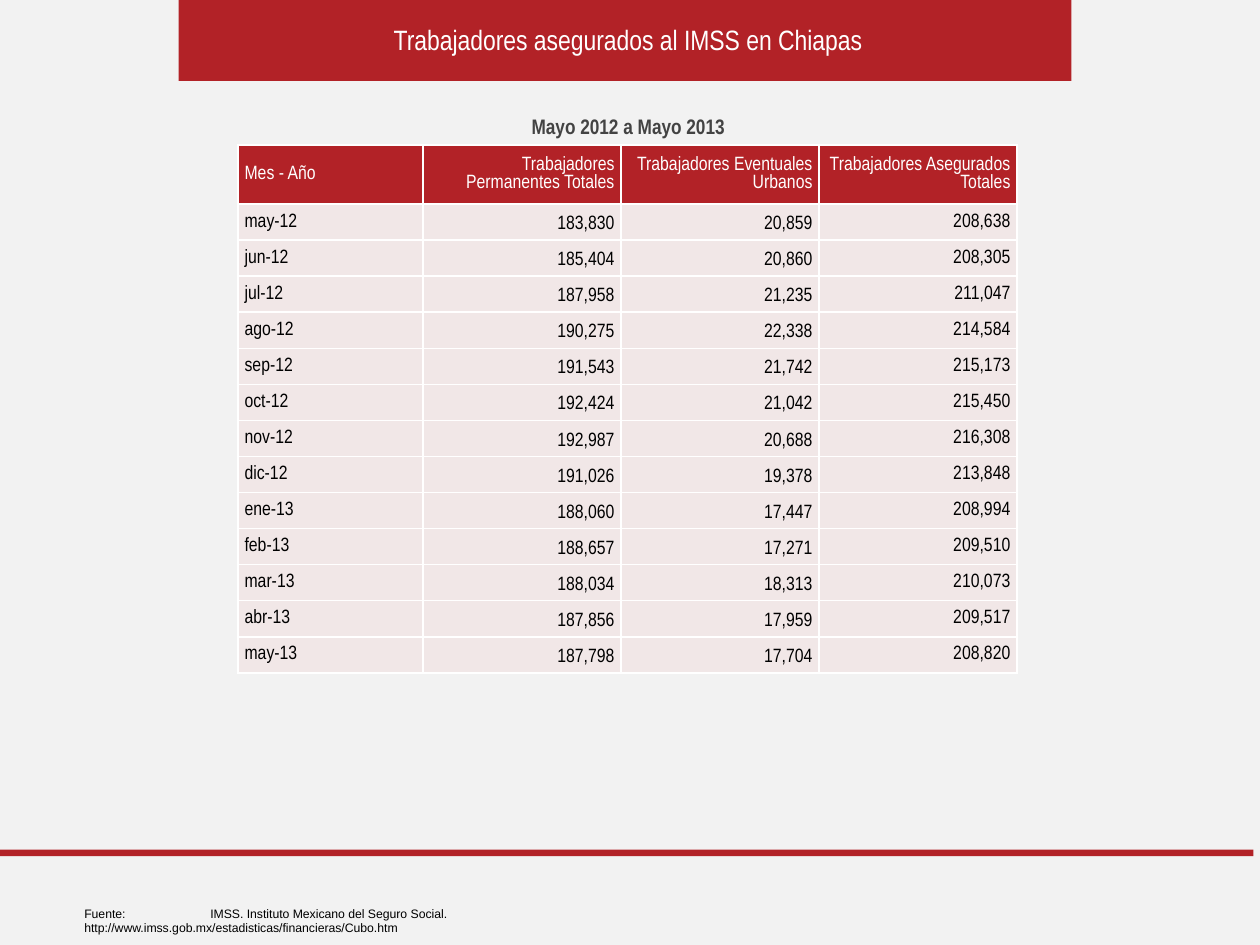
import pptx
import pptx.dml.color
import pptx.enum.shapes
import pptx.enum.text
import pptx.oxml
import pptx.oxml.ns
import pptx.util
from dataclasses import dataclass

Cm = pptx.util.Cm
Align = pptx.enum.text.PP_ALIGN
Anchor = pptx.enum.text.MSO_ANCHOR


@dataclass(frozen=True)
class Theme:
    background: str = "F2F2F2"
    red: str = "B22227"
    body: str = "F1E7E7"
    white: str = "FFFFFF"
    black: str = "000000"
    gray: str = "434343"
    narrow: str = "Arial Narrow"
    regular: str = "Arial"
    title_size: int = 16
    subtitle_size: int = 12
    table_size: int = 11
    source_size: int = 7


THEME = Theme()

TITLE = "Trabajadores asegurados al IMSS en Chiapas"
SUBTITLE = "Mayo 2012 a Mayo 2013"
SOURCE = (
    "Fuente:\tIMSS. Instituto Mexicano del Seguro Social. "
    "http://www.imss.gob.mx/estadisticas/financieras/Cubo.htm"
)
HEADERS = (
    "Mes - Año",
    "Trabajadores Permanentes Totales",
    "Trabajadores Eventuales Urbanos",
    "Trabajadores Asegurados Totales",
)
MONTHS = [
    ("may-12", 183830, 20859, 208638),
    ("jun-12", 185404, 20860, 208305),
    ("jul-12", 187958, 21235, 211047),
    ("ago-12", 190275, 22338, 214584),
    ("sep-12", 191543, 21742, 215173),
    ("oct-12", 192424, 21042, 215450),
    ("nov-12", 192987, 20688, 216308),
    ("dic-12", 191026, 19378, 213848),
    ("ene-13", 188060, 17447, 208994),
    ("feb-13", 188657, 17271, 209510),
    ("mar-13", 188034, 18313, 210073),
    ("abr-13", 187856, 17959, 209517),
    ("may-13", 187798, 17704, 208820),
]

BARS = [(3.6, 0, 18, 1.63), (0, 17.13, 25.27, 0.13)]
TITLE_BOX = (3.71, 0.33, 17.91, 0.93)
SUBTITLE_BOX = (3.71, 2.16, 17.91, 0.77)
SOURCE_BOX = (1.45, 18.14, 12.9, 0.56)
SOURCE_TAB = 2.54
TABLE_LEFT, TABLE_TOP = 4.8, 2.92
COLUMN_WIDTHS = (3.73, 3.99, 3.99, 3.99)
ROW_HEIGHTS = [1.19] + [0.72] * len(MONTHS)
CELL_MARGIN = 0.13


def rgb(color):
    return pptx.dml.color.RGBColor.from_string(color)


def paint(fill, color):
    fill.solid()
    fill.fore_color.rgb = rgb(color)


def write(paragraph, text, size, color, font_name, bold=False, align=Align.LEFT):
    paragraph.alignment = align
    run = paragraph.add_run()
    run.text = text
    run.font.name = font_name
    run.font.size = pptx.util.Pt(size)
    run.font.bold = bold
    run.font.color.rgb = rgb(color)


def add_bar(slide, box):
    shape = slide.shapes.add_shape(
        pptx.enum.shapes.MSO_SHAPE.RECTANGLE, *map(Cm, box)
    )
    shape.shadow.inherit = False
    paint(shape.fill, THEME.red)
    shape.line.fill.background()


def add_text_box(slide, box):
    frame = slide.shapes.add_textbox(*map(Cm, box)).text_frame
    frame.word_wrap = True
    frame.auto_size = pptx.enum.text.MSO_AUTO_SIZE.SHAPE_TO_FIT_TEXT
    return frame.paragraphs[0]


def add_tab(paragraph, position):
    namespace = pptx.oxml.ns.nsdecls("a")
    paragraph._p.get_or_add_pPr().append(pptx.oxml.parse_xml(
        f'<a:tabLst {namespace}><a:tab pos="{Cm(position)}" algn="l"/></a:tabLst>'
    ))


def add_borders(cell):
    properties = cell._tc.get_or_add_tcPr()
    namespace = pptx.oxml.ns.nsdecls("a")
    for index, side in enumerate(("lnL", "lnR", "lnT", "lnB")):
        properties.insert(index, pptx.oxml.parse_xml(
            f'<a:{side} {namespace} w="{pptx.util.Pt(1)}"><a:solidFill>'
            f'<a:srgbClr val="{THEME.white}"/></a:solidFill></a:{side}>'
        ))


def add_worker_table(slide):
    records = [HEADERS] + [
        (month, *(f"{value:,}" for value in values)) for month, *values in MONTHS
    ]
    table = slide.shapes.add_table(
        len(records), len(HEADERS), Cm(TABLE_LEFT), Cm(TABLE_TOP),
        Cm(sum(COLUMN_WIDTHS)), Cm(sum(ROW_HEIGHTS)),
    ).table
    table.first_row = False
    table.horz_banding = False
    for column, width in zip(table.columns, COLUMN_WIDTHS):
        column.width = Cm(width)
    for row, height in zip(table.rows, ROW_HEIGHTS):
        row.height = Cm(height)
    for row_index, record in enumerate(records):
        is_header = row_index == 0
        for column_index, text in enumerate(record):
            cell = table.cell(row_index, column_index)
            cell.margin_left = cell.margin_right = Cm(CELL_MARGIN)
            cell.margin_top = cell.margin_bottom = Cm(CELL_MARGIN)
            at_bottom = not is_header and column_index in (1, 2)
            cell.vertical_anchor = Anchor.BOTTOM if at_bottom else Anchor.MIDDLE
            paint(cell.fill, THEME.red if is_header else THEME.body)
            add_borders(cell)
            write(
                cell.text_frame.paragraphs[0], text, THEME.table_size,
                THEME.white if is_header else THEME.black, THEME.narrow,
                align=Align.RIGHT if column_index else Align.LEFT,
            )


def main():
    presentation = pptx.Presentation()
    presentation.slide_width = Cm(25.4)
    presentation.slide_height = Cm(19.05)
    slide = presentation.slides.add_slide(presentation.slide_layouts[6])
    paint(slide.background.fill, THEME.background)
    for bar in BARS:
        add_bar(slide, bar)
    write(add_text_box(slide, SUBTITLE_BOX), SUBTITLE, THEME.subtitle_size,
          THEME.gray, THEME.narrow, bold=True, align=Align.CENTER)
    write(add_text_box(slide, TITLE_BOX), TITLE, THEME.title_size,
          THEME.white, THEME.narrow, align=Align.CENTER)
    source = add_text_box(slide, SOURCE_BOX)
    add_tab(source, SOURCE_TAB)
    write(source, SOURCE, THEME.source_size, THEME.black, THEME.regular)
    add_worker_table(slide)
    presentation.save("out.pptx")


if __name__ == "__main__":
    main()
